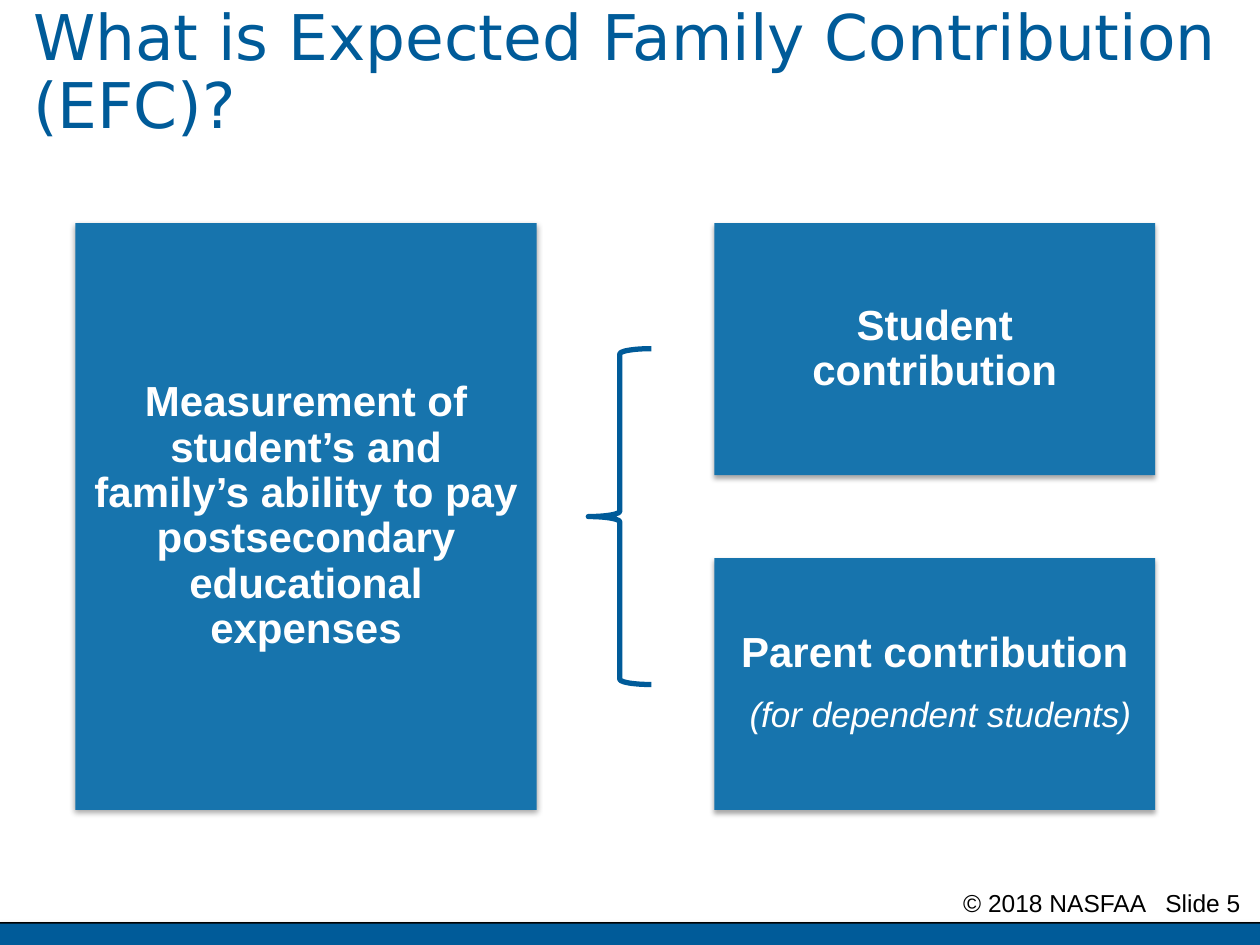
import lxml.etree
import pptx
import pptx.dml.color
import pptx.enum.shapes
import pptx.enum.text
import pptx.oxml.ns
import pptx.util

Cm = pptx.util.Cm
Pt = pptx.util.Pt
RGBColor = pptx.dml.color.RGBColor
SHAPE = pptx.enum.shapes.MSO_SHAPE
ALIGN = pptx.enum.text.PP_ALIGN
ANCHOR = pptx.enum.text.MSO_ANCHOR

NAVY = RGBColor(0x00, 0x5B, 0x99)
BLUE = RGBColor(0x17, 0x74, 0xAD)
BLACK = RGBColor(0x00, 0x00, 0x00)
WHITE = RGBColor(0xFF, 0xFF, 0xFF)

PAGE_WIDTH, PAGE_HEIGHT = 25.4, 19.05


class SlideBuilder:
    body_font = "Arial"
    title_font = "DejaVu Sans"

    def __init__(self, page):
        self.page = page

    def add_shadow(self, shape, distance, opacity):
        """Give a shape or connector a soft shadow that falls straight down."""
        qn = pptx.oxml.ns.qn
        properties = shape._element.spPr
        effects = lxml.etree.SubElement(properties, qn("a:effectLst"))
        shadow = lxml.etree.SubElement(
            effects, qn("a:outerShdw"), blurRad=str(Pt(3.1)),
            dist=str(Pt(distance)), dir="5400000", rotWithShape="0")
        color = lxml.etree.SubElement(shadow, qn("a:srgbClr"), val="000000")
        lxml.etree.SubElement(color, qn("a:alpha"), val=str(opacity * 1000))

    def add_span(self, para, text, size, color, font=body_font, bold=False, italic=False):
        span = para.add_run()
        span.text = text
        span.font.name = font
        span.font.size = Pt(size)
        span.font.color.rgb = color
        span.font.bold = bold
        span.font.italic = italic

    def shape(self, kind, left, top, width, height):
        return self.page.shapes.add_shape(
            kind, Cm(left), Cm(top), Cm(width), Cm(height))

    def bar(self, left, top, width, height):
        bar = self.shape(SHAPE.RECTANGLE, left, top, width, height)
        bar.shadow.inherit = False
        bar.fill.solid()
        bar.fill.fore_color.rgb = NAVY
        bar.line.fill.background()

    def rule(self, left, top, width):
        rule = self.page.shapes.add_connector(
            pptx.enum.shapes.MSO_CONNECTOR.STRAIGHT,
            Cm(left), Cm(top), Cm(left + width), Cm(top))
        rule.line.color.rgb = BLACK
        rule.line.width = Pt(2)
        self.add_shadow(rule, 1.6, 38)

    def brace(self, left, top, width, height):
        brace = self.shape(SHAPE.LEFT_BRACE, left, top, width, height)
        brace.shadow.inherit = False
        brace.fill.background()
        brace.line.color.rgb = NAVY
        brace.line.width = Pt(3)

    def card(self, left, top, width, height, heading, note=None):
        card = self.shape(SHAPE.RECTANGLE, left, top, width, height)
        card.fill.solid()
        card.fill.fore_color.rgb = BLUE
        card.line.fill.background()
        self.add_shadow(card, 1.8, 35)
        frame = card.text_frame
        frame.word_wrap = True
        frame.vertical_anchor = ANCHOR.MIDDLE
        frame.margin_left = frame.margin_right = Cm(0.38)
        frame.margin_top = frame.margin_bottom = Cm(0.38)
        self.add_span(frame.paragraphs[0], heading, 24, WHITE, bold=True)
        if note:
            para = frame.add_paragraph()
            self.add_span(para, " ", 24, WHITE)
            self.add_span(para, note, 20, WHITE, italic=True)
        for para in frame.paragraphs:
            para.alignment = ALIGN.CENTER
            para.line_spacing = 0.9
            para.space_after = Pt(8.4)

    def text(self, left, top, width, height, content, size, color,
             font=body_font, align=ALIGN.LEFT, spacing=1.0):
        box = self.page.shapes.add_textbox(
            Cm(left), Cm(top), Cm(width), Cm(height))
        box.text_frame.word_wrap = True
        para = box.text_frame.paragraphs[0]
        para.alignment = align
        para.line_spacing = spacing
        self.add_span(para, content, size, color, font)


def main():
    deck = pptx.Presentation()
    deck.slide_width = Cm(PAGE_WIDTH)
    deck.slide_height = Cm(PAGE_HEIGHT)
    builder = SlideBuilder(deck.slides.add_slide(deck.slide_layouts[6]))

    # Footer
    footer_top = 18.62
    builder.rule(0, footer_top, PAGE_WIDTH)
    builder.text(15.88, 17.78, 9.52, 0.64, "© 2018 NASFAA   Slide 5 ",
                 14, BLACK, align=ALIGN.RIGHT)
    builder.bar(0, footer_top, PAGE_WIDTH, PAGE_HEIGHT - footer_top)

    # Cards: the left one spans both contributions
    top, part_height, gap = 4.5, 5.08, 1.67
    full_height = 2 * part_height + gap
    builder.card(1.52, top, 9.3, full_height,
                 "Measurement of student’s and family’s ability to pay "
                 "postsecondary educational expenses")
    parts = [("Student contribution", None),
             ("Parent contribution", "(for dependent students)")]
    for index, (heading, note) in enumerate(parts):
        builder.card(14.4, top + index * (part_height + gap), 8.89,
                     part_height, heading, note)

    # Brace, centred on the cards
    brace_height = 6.77
    builder.brace(11.86, top + (full_height - brace_height) / 2, 1.27, brace_height)

    # Title
    builder.text(0.42, 0, 24.56, 3.18,
                 "What is Expected Family Contribution (EFC)?",
                 36, NAVY, SlideBuilder.title_font, spacing=0.9)

    deck.save("out.pptx")


if __name__ == "__main__":
    main()
